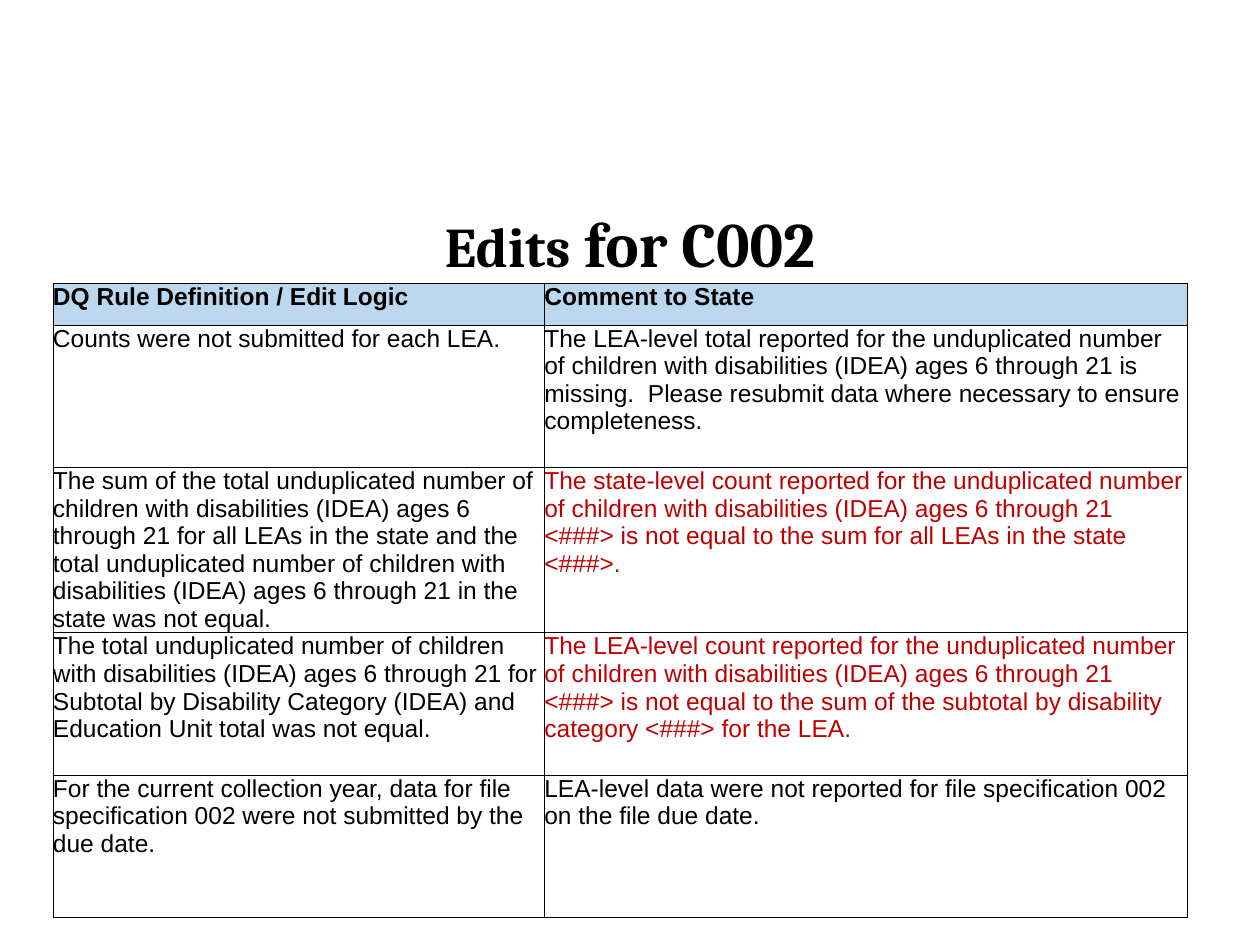
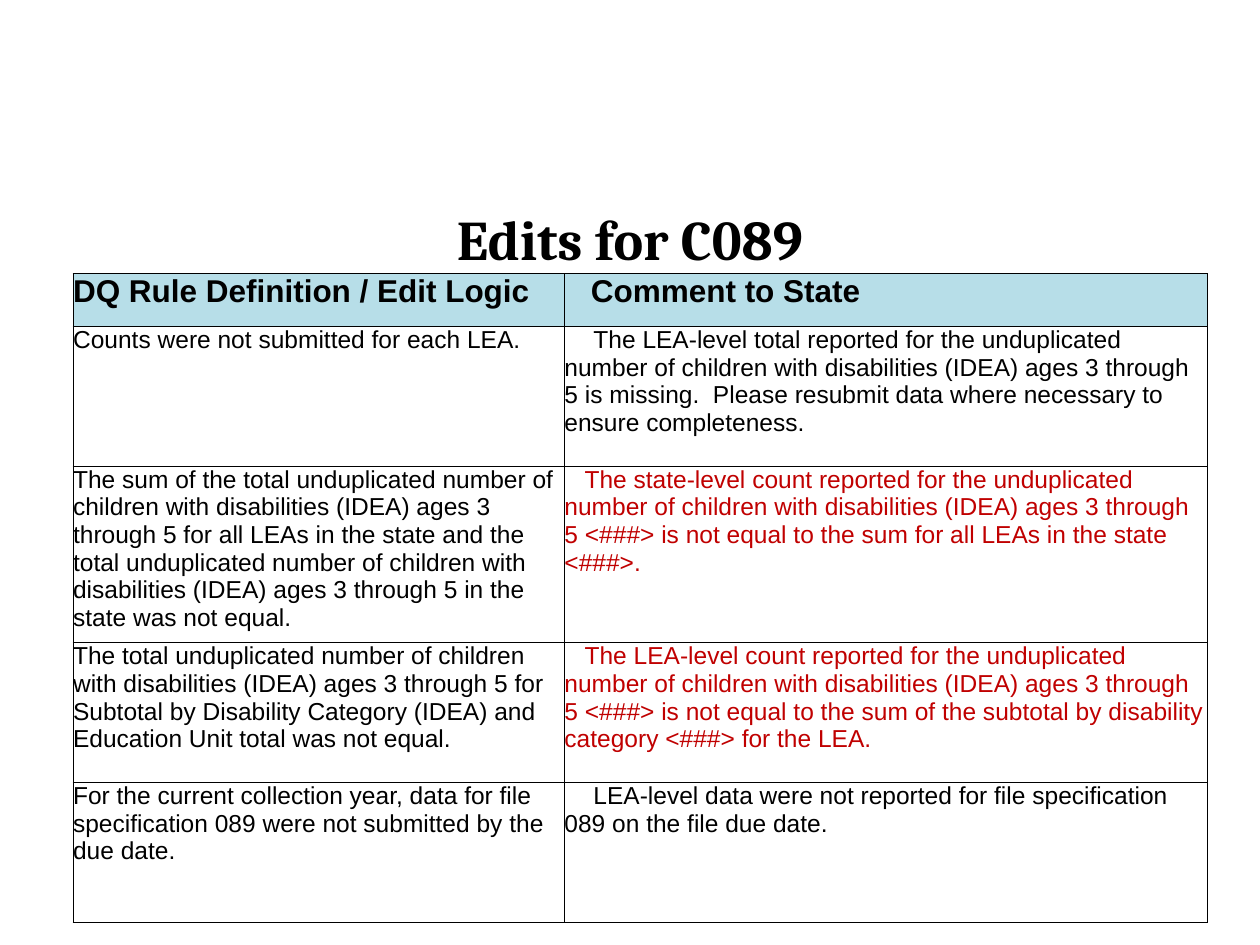
from dataclasses import dataclass

from lxml import etree
from pptx import Presentation
from pptx import util as u
from pptx.dml.color import RGBColor
from pptx.enum import text
from pptx.oxml import ns


@dataclass(frozen=True)
class Theme:
    ink: str = "000000"
    alert: str = "C00000"
    title_font: str = "Cambria"
    body_font: str = "Arial"
    title_size: int = 32
    large_title_size: int = 36
    body_size: int = 14
    border_width: float = 0.5


@dataclass(frozen=True)
class EditPage:
    title: tuple          # (words, size) for each run
    title_height: float   # lengths in inches
    table_left: float
    table_top: float
    header_height: float
    row_height: float
    header_fill: str
    header_size: int
    header_indent: float
    plain_indent: float
    alert_indent: float
    ages: str
    file_spec: str


THEME = Theme()
PAGE_WIDTH, PAGE_HEIGHT = 10, 7.5
TITLE_LEFT, TITLE_TOP, CONTENT_WIDTH = 0.5, 1.58, 9
COLUMN_WIDTHS = (3.9, 5.1)
ROW_SHARES = (1, 1.1, 1, 1)

HEADINGS = ("DQ Rule Definition / Edit Logic", "Comment to State")
CHILDREN = "children with disabilities (IDEA) ages {ages}"
# Rule, comment, whether the comment is highlighted
RULES = (
    ("Counts were not submitted for each LEA.",
     f"The LEA-level total reported for the unduplicated number of {CHILDREN} is missing.  "
     "Please resubmit data where necessary to ensure completeness.", False),
    (f"The sum of the total unduplicated number of {CHILDREN} for all LEAs in the state "
     f"and the total unduplicated number of {CHILDREN} in the state was not equal.",
     f"The state-level count reported for the unduplicated number of {CHILDREN} <###> "
     "is not equal to the sum for all LEAs in the state <###>.", True),
    (f"The total unduplicated number of {CHILDREN} for Subtotal by Disability Category "
     "(IDEA) and Education Unit total was not equal.",
     f"The LEA-level count reported for the unduplicated number of {CHILDREN} <###> "
     "is not equal to the sum of the subtotal by disability category <###> for the LEA.", True),
    ("For the current collection year, data for file specification {file_spec} "
     "were not submitted by the due date.",
     "LEA-level data were not reported for file specification {file_spec} "
     "on the file due date.", False),
)

PAGES = (
    EditPage(title=(("Edits", THEME.title_size), (" for C002", THEME.large_title_size)),
             title_height=0.75, table_left=0.42, table_top=2.25,
             header_height=0.33, row_height=1.13, header_fill="BDD7EE",
             header_size=THEME.body_size, header_indent=0, plain_indent=0, alert_indent=0,
             ages="6 through 21", file_spec="002"),
    EditPage(title=(("Edits for C089", THEME.title_size),),
             title_height=0.58, table_left=0.58, table_top=2.17,
             header_height=0.42, row_height=1.11, header_fill="B7DEE8",
             header_size=18, header_indent=0.21, plain_indent=0.23, alert_indent=0.16,
             ages="3 through 5", file_spec="089"),
)


def style_font(font, name, size, color=THEME.ink, bold=False):
    font.name, font.size, font.bold = name, u.Pt(size), bold
    font.color.rgb = RGBColor.from_string(color)


def add_title(page, box, runs):
    shape = page.shapes.add_textbox(*(u.Inches(length) for length in box))
    frame = shape.text_frame
    frame.word_wrap = True
    frame.vertical_anchor = text.MSO_ANCHOR.TOP
    frame.margin_top = u.Inches(0.04)
    para = frame.paragraphs[0]
    para.alignment = text.PP_ALIGN.CENTER
    for words, size in runs:
        span = para.add_run()
        span.text = words
        style_font(span.font, THEME.title_font, size, bold=True)


def add_borders(cell):
    properties = cell._tc.get_or_add_tcPr()
    for position, side in enumerate(("lnL", "lnR", "lnT", "lnB")):
        line = etree.Element(ns.qn(f"a:{side}"), w=str(u.Pt(THEME.border_width)))
        fill = etree.SubElement(line, ns.qn("a:solidFill"))
        etree.SubElement(fill, ns.qn("a:srgbClr"), val=THEME.ink)
        properties.insert(position, line)


def fill_cell(cell, words, size, color=THEME.ink, bold=False, indent=0, fill=None):
    cell.margin_left = cell.margin_right = cell.margin_top = cell.margin_bottom = 0
    if fill:
        cell.fill.solid()
        cell.fill.fore_color.rgb = RGBColor.from_string(fill)
    else:
        cell.fill.background()
    add_borders(cell)
    para = cell.text_frame.paragraphs[0]
    para.text = words
    if indent:
        para._p.get_or_add_pPr().set("indent", str(u.Inches(indent)))
    style_font(para.runs[0].font, THEME.body_font, size, color, bold)


def add_rule_table(page, left, top, content):
    heights = [content.header_height] + [content.row_height * share for share in ROW_SHARES]
    frame = page.shapes.add_table(len(heights), len(COLUMN_WIDTHS), u.Inches(left), u.Inches(top),
                                  u.Inches(sum(COLUMN_WIDTHS)), u.Inches(sum(heights)))
    table = frame.table
    table.horz_banding = table.first_row = False
    for column, width in zip(table.columns, COLUMN_WIDTHS):
        column.width = u.Inches(width)
    for row, height in zip(table.rows, heights):
        row.height = u.Inches(height)

    # Header row
    for column, (heading, indent) in enumerate(zip(HEADINGS, (0, content.header_indent))):
        fill_cell(table.cell(0, column), heading, content.header_size, bold=True,
                  indent=indent, fill=content.header_fill)

    # Rules with their comments
    for row, (rule, comment, highlighted) in enumerate(RULES, start=1):
        rule, comment = (words.format(ages=content.ages, file_spec=content.file_spec)
                         for words in (rule, comment))
        fill_cell(table.cell(row, 0), rule, THEME.body_size)
        fill_cell(table.cell(row, 1), comment, THEME.body_size,
                  color=THEME.alert if highlighted else THEME.ink,
                  indent=content.alert_indent if highlighted else content.plain_indent)


def add_edit_page(deck, content):
    page = deck.slides.add_slide(deck.slide_layouts[6])
    add_rule_table(page, content.table_left, content.table_top, content)
    add_title(page, (TITLE_LEFT, TITLE_TOP, CONTENT_WIDTH, content.title_height), content.title)


def main():
    deck = Presentation()
    deck.slide_width, deck.slide_height = u.Inches(PAGE_WIDTH), u.Inches(PAGE_HEIGHT)
    for content in PAGES:
        add_edit_page(deck, content)
    deck.save("out.pptx")


if __name__ == "__main__":
    main()
